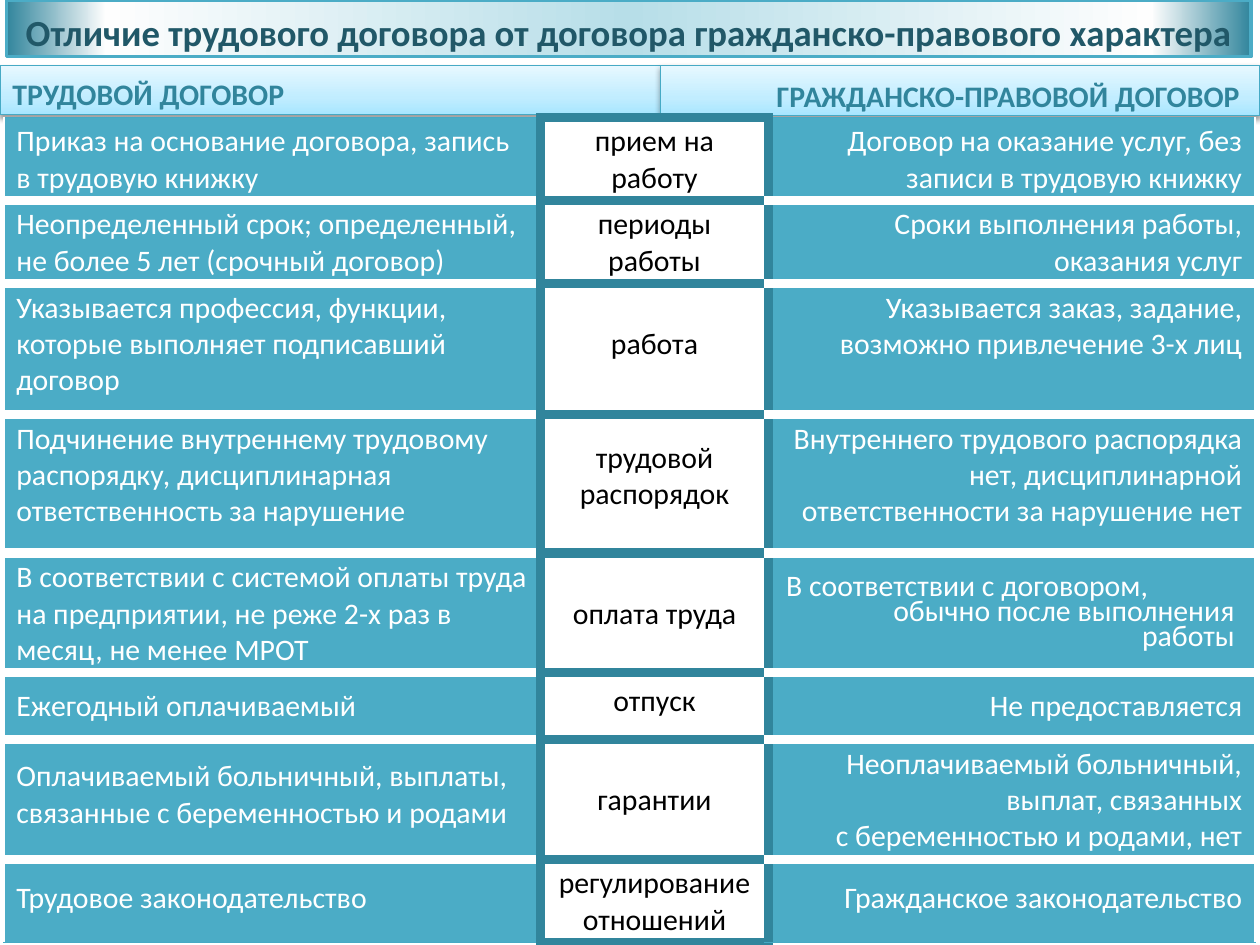
from lxml import etree
from pptx import Presentation
from pptx.dml.color import RGBColor
from pptx.enum.shapes import MSO_SHAPE
from pptx.enum.text import PP_ALIGN as AL
from pptx.oxml.ns import qn
from pptx.util import Inches, Pt

WHITE = RGBColor(0xFF, 0xFF, 0xFF)
NEAR_WHITE = RGBColor(0xFE, 0xFE, 0xFE)
BLACK = RGBColor(0, 0, 0)
TEAL = RGBColor(0x4B, 0xAC, 0xC6)
EDGE = RGBColor(0x46, 0xAA, 0xC5)
DARK = RGBColor(0x31, 0x85, 0x9C)
DEEP = RGBColor(0x21, 0x58, 0x68)
PALE = RGBColor(0xB7, 0xDE, 0xE8)
TITLE_STOPS = [(0, DARK), (8, NEAR_WHITE), (50, PALE), (92, NEAR_WHITE), (100, DARK)]
HEADER_STOPS = [(0, RGBColor(0xA7, 0xE6, 0xFF)), (35, RGBColor(0xC1, 0xED, 0xFF)),
                (100, RGBColor(0xE7, 0xF8, 0xFF))]

COLS = [4.26, 1.81, 3.86]
ALIGNS = [AL.LEFT, AL.CENTER, AL.RIGHT]
# Height, then text and extra top margin of each cell
ROWS = [
    (0.66, ("Приказ на основание договора, запись в трудовую книжку", 0),
     ("прием на работу", 0),
     ("Договор на оказание услуг, без записи в трудовую книжку", 0)),
    (0.66, ("Неопределенный срок; определенный, не более 5 лет (срочный договор)", 0),
     ("периоды работы", 0),
     ("Сроки выполнения работы, оказания услуг", 0)),
    (1.04, ("Указывается профессия, функции, которые выполняет подписавший договор", 0),
     ("работа", 0.29),
     ("Указывается заказ, задание, возможно привлечение 3-х лиц", 0)),
    (1.1, ("Подчинение внутреннему трудовому распорядку, дисциплинарная "
           "ответственность за нарушение", 0),
     ("трудовой распорядок", 0.15),
     ("Внутреннего трудового распорядка нет, дисциплинарной "
      "ответственности за нарушение нет", 0)),
    (0.95, ("В соответствии с системой оплаты труда на предприятии, "
            "не реже 2-х раз в месяц, не менее МРОТ", 0),
     ("оплата труда", 0.29),
     ("В соответствии с договором,\nобычно после выполнения\nработы", 0.13)),
    (0.53, ("Ежегодный оплачиваемый", 0.07),
     ("отпуск", 0.03),
     ("Не предоставляется", 0.07)),
    (0.95, ("Оплачиваемый больничный, выплаты, связанные с беременностью и родами", 0.1),
     ("гарантии", 0.29),
     ("Неоплачиваемый больничный, выплат, связанных\nс беременностью и родами, нет", 0)),
    (0.66, ("Трудовое законодательство", 0.12),
     ("регулирование отношений", 0),
     ("Гражданское законодательство", 0.12)),
]


class Deck:
    font = {"name": "Calibri", "size": Pt(17), "bold": False}

    def __init__(self, prs):
        self.s = prs.slides.add_slide(prs.slide_layouts[6])

    def text(self, tf, text, color, align, **fmt):
        for i, line in enumerate(text.split("\n")):
            p = tf.add_paragraph() if i else tf.paragraphs[0]
            p.alignment = align
            r = p.add_run()
            r.text = line
            for key, value in {**self.font, **fmt}.items():
                setattr(r.font, key, value)
            r.font.color.rgb = color

    def band(self, box, text, color, align, stops, angle, line, width, size=17, insets=(0.05, 0.1)):
        """Gradient rectangle with one bold line; insets are top and right."""
        sp = self.s.shapes.add_shape(MSO_SHAPE.RECTANGLE, *map(Inches, box))
        sp.fill.gradient()
        sp.fill.gradient_angle = angle
        gs_list = sp.fill._xPr.find(qn("a:gradFill")).find(qn("a:gsLst"))
        for gs in list(gs_list):
            gs_list.remove(gs)
        for pos, rgb in stops:
            gs = etree.SubElement(gs_list, qn("a:gs"), pos=str(pos * 1000))
            etree.SubElement(gs, qn("a:srgbClr"), val=str(rgb))
        sp.line.color.rgb = line
        sp.line.width = Pt(width)
        sp.shadow.inherit = False
        tf = sp.text_frame
        tf.word_wrap = True
        top, right = insets
        tf.margin_top, tf.margin_right = Inches(top), Inches(right)
        tf.margin_bottom = 0
        self.text(tf, text, color, align, size=Pt(size), bold=True)
        return sp

    def drop_shadow(self, sp):
        effects = sp._element.spPr.find(qn("a:effectLst"))
        shadow = etree.SubElement(effects, qn("a:outerShdw"), blurRad="40000",
                                  dist="20000", dir="5400000", rotWithShape="0")
        rgb = etree.SubElement(shadow, qn("a:srgbClr"), val=str(BLACK))
        etree.SubElement(rgb, qn("a:alpha"), val="38000")

    def borders(self, cell, sides):
        """Sides are (colour, points) for left, right, top and bottom."""
        tc_pr = cell._tc.get_or_add_tcPr()
        for i, (side, (color, width)) in enumerate(zip("LRTB", sides)):
            ln = etree.Element(qn(f"a:ln{side}"), w=str(int(Pt(width))))
            fill = etree.SubElement(ln, qn("a:solidFill"))
            etree.SubElement(fill, qn("a:srgbClr"), val=str(color))
            tc_pr.insert(i, ln)

    def table(self, left, top, cols, rows):
        heights = [row[0] for row in rows]
        frame = self.s.shapes.add_table(len(rows), len(cols), *map(
            Inches, (left, top, sum(cols), sum(heights))))
        tbl = frame.table
        tbl.first_row = tbl.horz_banding = False
        for col, width in zip(tbl.columns, cols):
            col.width = Inches(width)
        dark, gap, thin, outer = (DARK, 6), (WHITE, 6), (EDGE, 0.75), (WHITE, 1)
        for i, (height, *cells) in enumerate(rows):
            tbl.rows[i].height = Inches(height)
            above = gap if i else thin
            below = gap if i < len(rows) - 1 else thin
            sides = [(outer, dark, above, below), (dark,) * 4, (dark, outer, above, below)]
            for j, (text, extra) in enumerate(cells):
                cell = tbl.cell(i, j)
                middle = j == 1
                cell.fill.solid()
                cell.fill.fore_color.rgb = WHITE if middle else TEAL
                cell.margin_top = Inches(0.05 + extra)
                cell.margin_bottom = Inches(0.03)
                self.text(cell.text_frame, text, BLACK if middle else WHITE, ALIGNS[j])
                self.borders(cell, sides[j])
        return tbl


def main():
    prs = Presentation()
    prs.slide_width, prs.slide_height = Inches(10), Inches(7.5)
    deck = Deck(prs)
    deck.band((0.05, 0, 9.88, 0.45),
              "Отличие трудового договора от договора гражданско-правового характера",
              DEEP, AL.CENTER, TITLE_STOPS, 0, TEAL, 2, size=21)
    header = (HEADER_STOPS, 90, EDGE, 0.75)
    for sp in (deck.band((0, 0.52, 5.24, 0.39), "ТРУДОВОЙ ДОГОВОР", DARK, AL.LEFT, *header),
               deck.band((5.24, 0.52, 4.76, 0.4), "ГРАЖДАНСКО-ПРАВОВОЙ ДОГОВОР", DARK,
                         AL.RIGHT, *header, insets=(0.07, 0.16))):
        deck.drop_shadow(sp)

    tbl = deck.table(0.03, 0.93, COLS, ROWS)
    payment = tbl.cell(4, 2)
    payment.margin_left, payment.margin_right = Inches(0.14), Inches(0.16)
    for p in payment.text_frame.paragraphs:
        p.line_spacing = 0.7
    payment.text_frame.paragraphs[0].alignment = AL.LEFT
    prs.save("out.pptx")


if __name__ == "__main__":
    main()
